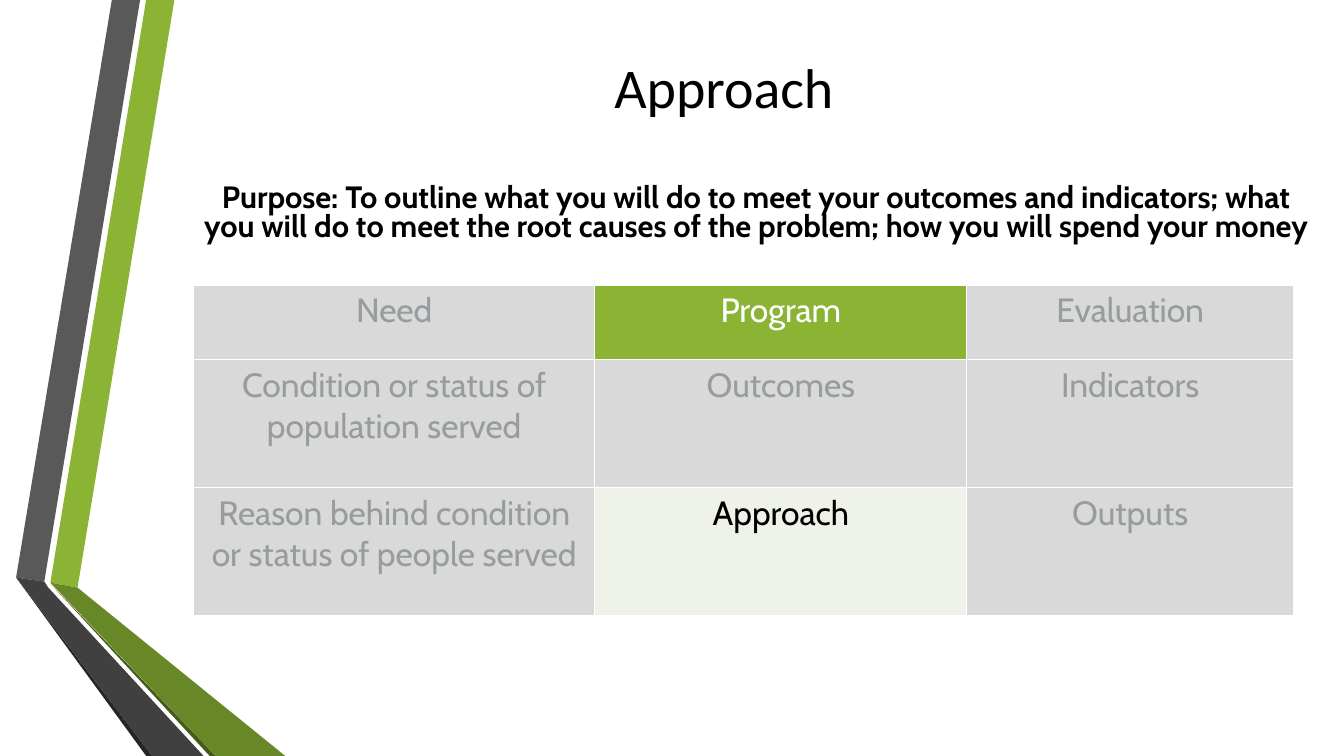
from lxml.etree import SubElement
from pptx import Presentation
from pptx.dml.color import RGBColor
from pptx.enum.text import MSO_ANCHOR, MSO_AUTO_SIZE, PP_ALIGN
from pptx.oxml import parse_xml
from pptx.oxml.ns import nsdecls, qn
from pptx.util import Inches, Pt

COLORS = {
    "black": "000000", "white": "FFFFFF", "muted": "979D9F", "cell": "D9D9D9",
    "green": "8BB434", "dark_green": "688727", "deep_green": "465A1A",
    "pale_green": "EEF2E8", "gray": "595959", "dark_gray": "404040",
    "deep_gray": "262626",
}
RIBBONS = [
    ("green", [(0.5, 5.78), (0.77, 5.83), (1.73, 0), (1.45, 0)]),
    ("gray", [(1.39, 0), (1.11, 0), (0.16, 5.73), (0.44, 5.77)]),
    ("deep_gray", [(0.16, 5.73), (1.45, 7.5), (1.51, 7.5)]),
    ("deep_green", [(0.5, 5.79), (2.08, 7.5), (2.14, 7.5)]),
    ("dark_green", [(0.5, 5.78), (2.14, 7.5), (2.83, 7.5), (0.77, 5.83)]),
    ("dark_gray", [(2.02, 7.5), (0.48, 5.83), (0.44, 5.77), (0.16, 5.73), (1.51, 7.5)]),
]
PURPOSE = ("Purpose: To outline what you will do to meet your outcomes and indicators; "
           "what you will do to meet the root causes of the problem; "
           "how you will spend your money")
GRID = [
    ["Need", "Program", "Evaluation"],
    ["Condition or status of population served", "Outcomes", "Indicators"],
    ["Reason behind condition or status of people served", "Approach", "Outputs"],
]
HIGHLIGHTS = {"Program": ("green", "white"), "Approach": ("pale_green", "black")}
COLUMN_SHARES = [3.98, 3.69, 3.24]
ROW_SHARES = [0.74, 1.27, 1.27]


def color(name):
    return RGBColor.from_string(COLORS[name])


def write(frame, text, font, size, ink, bold=False):
    """Fill a text frame with one centred, formatted paragraph."""
    frame.text = text
    para = frame.paragraphs[0]
    para.alignment = PP_ALIGN.CENTER
    span = para.runs[0].font
    span.name, span.size, span.bold = font, Pt(size), bold
    span.color.rgb = color(ink)
    return para


def add_ribbons(page, left, top):
    for fill, points in RIBBONS:
        corners = [(Inches(left + x), Inches(top + y)) for x, y in points]
        builder = page.shapes.build_freeform(*corners[0])
        builder.add_line_segments(corners[1:], close=True)
        ribbon = builder.convert_to_shape()
        ribbon.shadow.inherit = False
        ribbon.fill.solid()
        ribbon.fill.fore_color.rgb = color(fill)
        ribbon.line.fill.background()


def fill_placeholder(holder, box, text, font, size, bold=False):
    holder.left, holder.top, holder.width, holder.height = map(Inches, box)
    frame = holder.text_frame
    frame.word_wrap = True
    frame.auto_size = MSO_AUTO_SIZE.NONE
    frame.vertical_anchor = MSO_ANCHOR.MIDDLE
    return write(frame, text, font, size, "black", bold)


def add_purpose(page, box):
    para = fill_placeholder(page.placeholders[1], box, PURPOSE, "Cabin", 22, True)
    para.line_spacing = 0.8
    para.space_before = Pt(0)
    properties = para._p.get_or_add_pPr()
    properties.set("marL", "0")
    properties.set("indent", "0")
    SubElement(properties, qn("a:buNone"))


def outline_cell(cell):
    properties = cell._tc.get_or_add_tcPr()
    for index, side in enumerate(("lnL", "lnR", "lnT", "lnB")):
        properties.insert(index, parse_xml(
            f'<a:{side} {nsdecls("a")} w="{Pt(1)}"><a:solidFill>'
            f'<a:srgbClr val="{COLORS["white"]}"/></a:solidFill></a:{side}>'))


def add_grid(page, box):
    left, top, width, height = box
    table = page.shapes.add_table(len(GRID), len(GRID[0]), *map(Inches, box)).table
    for column, share in zip(table.columns, COLUMN_SHARES):
        column.width = Inches(width * share / sum(COLUMN_SHARES))
    for row, share in zip(table.rows, ROW_SHARES):
        row.height = Inches(height * share / sum(ROW_SHARES))
    for row, texts in zip(table.rows, GRID):
        for cell, text in zip(row.cells, texts):
            fill, ink = HIGHLIGHTS.get(text, ("cell", "muted"))
            cell.margin_left = cell.margin_right = Inches(0.08)
            cell.margin_top = cell.margin_bottom = Inches(0.05)
            cell.fill.solid()
            cell.fill.fore_color.rgb = color(fill)
            write(cell.text_frame, text, "Cabin", 24, ink)
            outline_cell(cell)


def main():
    deck = Presentation()
    deck.slide_width, deck.slide_height = Inches(13.33), Inches(7.5)
    page = deck.slides.add_slide(deck.slide_layouts[1])
    add_ribbons(page, 0, 0)
    fill_placeholder(page.shapes.title, (1.7, 0.35, 10.96, 1), "Approach", "Calibri", 40)
    add_purpose(page, (1.88, 1.8, 11.24, 0.65))
    add_grid(page, (1.92, 2.83, 10.91, 3.28))
    deck.save("out.pptx")


if __name__ == "__main__":
    main()
